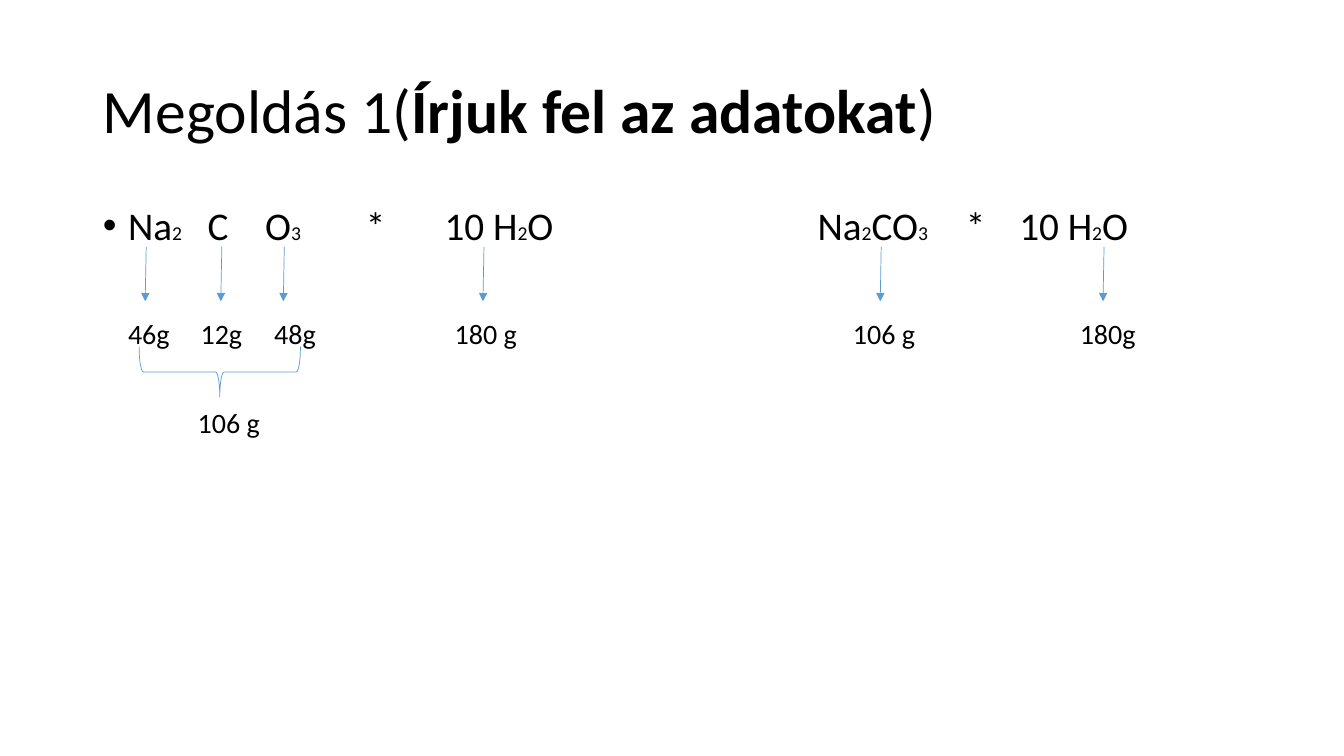
from lxml import etree
from pptx import Presentation, util as u
from pptx.dml.color import RGBColor
from pptx.enum import shapes, text
from pptx.oxml import ns

BLACK = RGBColor(0x00, 0x00, 0x00)
BLUE = RGBColor(0x5B, 0x9B, 0xD5)

FORMULA_TOP, MASS_TOP = 2.05, 3.18
ARROW_TOP, ARROW_BOTTOM = 2.45, 2.99
FORMULA_TERMS = [
    (2.06, "C"), (2.63, "O_3"), (3.63, "*"), (4.41, "10 H_2O"),
    (8.11, "Na_2CO_3"), (9.58, "*"), (10.11, "10 H_2O"),
]
MASSES = [(1.99, "12g"), (2.72, "48g"), (4.51, "180 g"), (8.46, "106 g"), (10.71, "180g")]
ARROWS = [1.45, 2.2, 2.82, 4.8, 8.74, 10.95]
FIRST_COLUMN = [
    ("Na_2", 28, 10, 0.25, "•"),
    ("46g", 20, 51, 0.25, None),
    ("106 g", 20, 42, 0.94, None),
]


class ChemistrySlide:
    """Hold the style and the current slide, and add each kind of element."""

    font = {"name": "Calibri", "bold": False}
    subscript_size = 14
    line_width = 0.5

    def __init__(self, presentation):
        self.slide = presentation.slides.add_slide(presentation.slide_layouts[1])

    def apply(self, target, values):
        for name, value in values.items():
            setattr(target, name, value)

    def place(self, shape, left, top, width, height):
        box = zip(("left", "top", "width", "height"), (left, top, width, height))
        self.apply(shape, {name: u.Inches(value) for name, value in box})

    def run(self, paragraph, wording, size, **extra):
        run = paragraph.add_run()
        run.text = wording
        self.apply(run.font, {**self.font, "size": u.Pt(size), **extra})
        run.font.color.rgb = BLACK

    def formula(self, paragraph, wording, size):
        start, *rest = wording.split("_")
        self.run(paragraph, start, size)
        for part in rest:
            self.run(paragraph, part[0], self.subscript_size)
            if part[1:]:
                self.run(paragraph, part[1:], size)

    def title(self, parts):
        shape = self.slide.shapes.title
        self.place(shape, 0.92, 0.4, 11.5, 1.45)
        self.apply(shape.text_frame, {
            "auto_size": text.MSO_AUTO_SIZE.NONE,
            "vertical_anchor": text.MSO_ANCHOR.MIDDLE,
        })
        paragraph = shape.text_frame.paragraphs[0]
        self.apply(paragraph, {"alignment": text.PP_ALIGN.LEFT, "line_spacing": 0.9})
        for wording, bold in parts:
            self.run(paragraph, wording, 44, bold=bold)

    def body(self, rows):
        shape = self.slide.placeholders[1]
        self.place(shape, 0.92, 2, 11.5, 4.76)
        frame = shape.text_frame
        frame.auto_size = text.MSO_AUTO_SIZE.NONE
        for index, (wording, size, before, margin, bullet) in enumerate(rows):
            paragraph = frame.add_paragraph() if index else frame.paragraphs[0]
            self.apply(paragraph, {"line_spacing": 0.9, "space_before": u.Pt(before)})
            self.indent(paragraph, margin, bullet)
            self.formula(paragraph, wording, size)

    def indent(self, paragraph, margin, bullet):
        properties = paragraph._p.get_or_add_pPr()
        properties.set("marL", str(u.Inches(margin)))
        properties.set("indent", str(u.Inches(-margin if bullet else 0)))
        if bullet:
            font = etree.SubElement(properties, ns.qn("a:buFont"))
            font.set("typeface", "Arial")
            etree.SubElement(properties, ns.qn("a:buChar")).set("char", bullet)
        else:
            etree.SubElement(properties, ns.qn("a:buNone"))

    def label(self, left, top, wording, size):
        shape = self.slide.shapes.add_textbox(
            u.Inches(left), u.Inches(top), u.Inches(1.3), u.Inches(0.4))
        frame = shape.text_frame
        sides = ("left", "top", "right", "bottom")
        self.apply(frame, {f"margin_{side}": 0 for side in sides})
        frame.word_wrap = True
        frame.paragraphs[0].line_spacing = 0.9
        self.formula(frame.paragraphs[0], wording, size)

    def outline(self, line):
        line.color.rgb = BLUE
        line.width = u.Pt(self.line_width)

    def arrow(self, x):
        connector = self.slide.shapes.add_connector(
            shapes.MSO_CONNECTOR.STRAIGHT, u.Inches(x), u.Inches(ARROW_TOP),
            u.Inches(x - 0.01), u.Inches(ARROW_BOTTOM))
        self.outline(connector.line)
        line = connector.line._get_or_add_ln()
        etree.SubElement(line, ns.qn("a:tailEnd")).set("type", "triangle")
        etree.SubElement(connector._element.spPr, ns.qn("a:effectLst"))

    def brace(self, left, top, width, height):
        shape = self.slide.shapes.add_shape(
            shapes.MSO_SHAPE.RIGHT_BRACE, u.Inches(left), u.Inches(top),
            u.Inches(width), u.Inches(height))
        shape.rotation = 90
        shape.shadow.inherit = False
        shape.fill.background()
        self.outline(shape.line)


def main():
    presentation = Presentation()
    presentation.slide_width = u.Inches(13.33)
    presentation.slide_height = u.Inches(7.5)
    slide = ChemistrySlide(presentation)
    slide.title([("Megoldás 1(", False), ("Írjuk fel az adatokat", True), (")", False)])
    slide.body(FIRST_COLUMN)
    for left, wording in FORMULA_TERMS:
        slide.label(left, FORMULA_TOP, wording, 28)
    for left, wording in MASSES:
        slide.label(left, MASS_TOP, wording, 20)
    for x in ARROWS:
        slide.arrow(x)
    slide.brace(1.93, 2.89, 0.5, 1.6)
    presentation.save("out.pptx")


if __name__ == "__main__":
    main()
